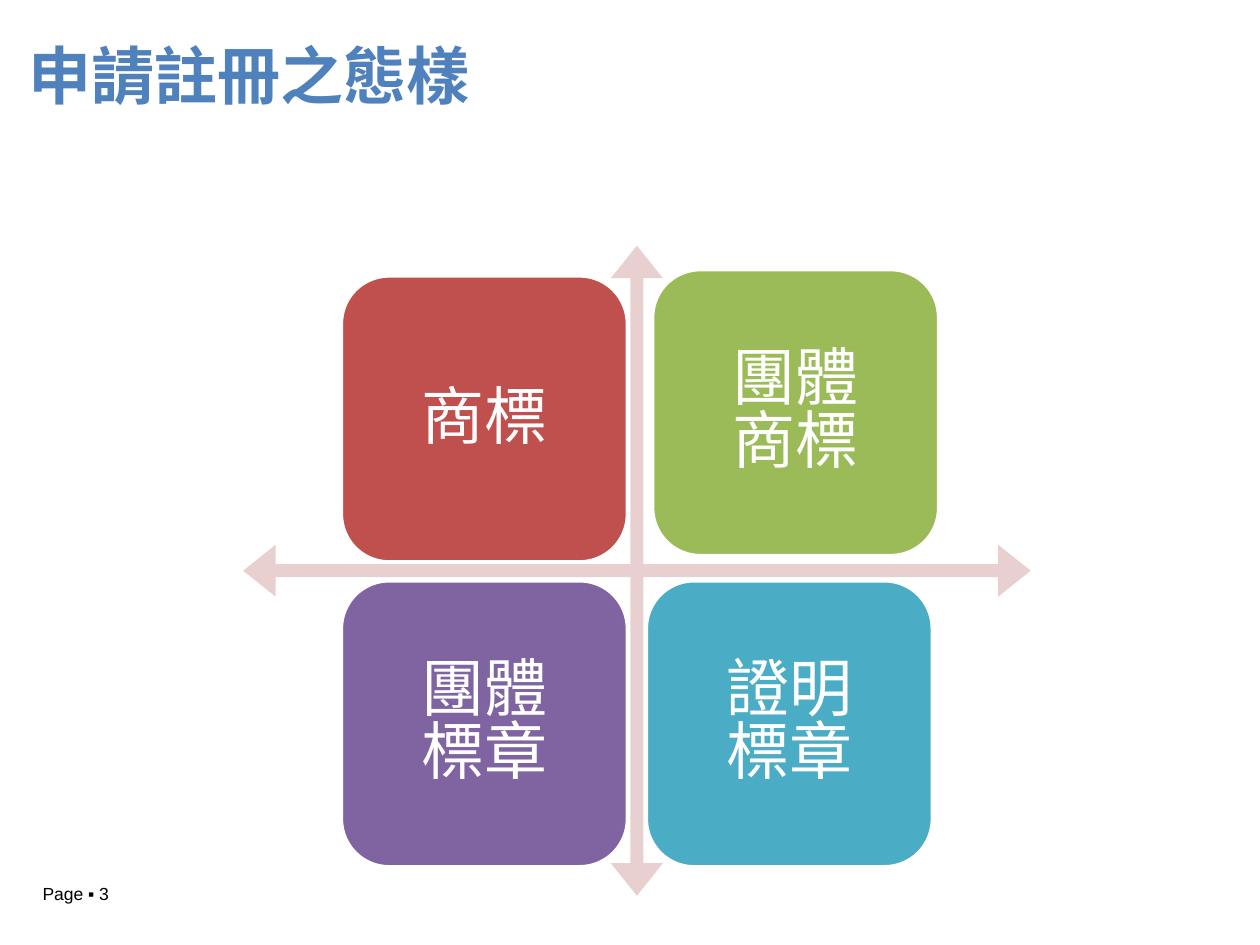
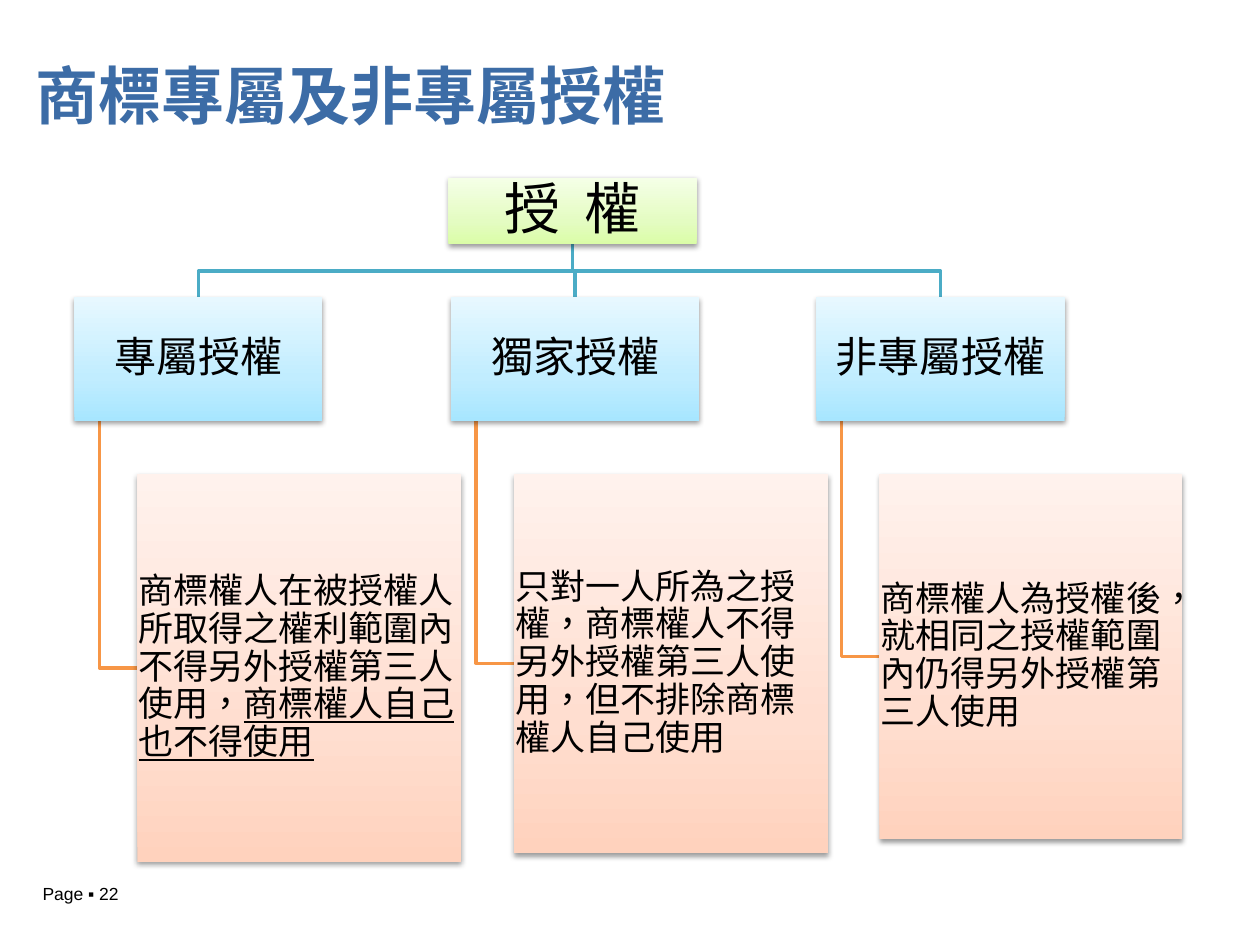
"""Build two slides on trademark registration types and licensing."""
from lxml.etree import SubElement
from pptx import Presentation
from pptx.dml.color import RGBColor
from pptx.enum.shapes import MSO_SHAPE as SHAPE
from pptx.enum.text import MSO_ANCHOR as ANCHOR, MSO_AUTO_SIZE as AUTO, PP_ALIGN as ALIGN
from pptx.oxml.ns import qn
from pptx.util import Inches, Pt

CJK = "Noto Sans CJK SC"
WHITE, BLACK = "FFFFFF", "000000"
BLUE, RED, GREEN, PURPLE, TEAL, ORANGE = "4F81BD", "C0504D", "9BBB59", "8064A2", "4BACC6", "F79646"
PALE_RED = "E8D0D0"
TITLE_GRADIENT = ([(0, "2A4C75"), (50, "3C6CA6"), (100, "4780C5")], 225)
LIME_GRADIENT = ([(0, "DAFDA7"), (35, "E4FCC2"), (100, "F5FFE7")], 270)
SKY_GRADIENT = ([(0, "A7E6FF"), (35, "C1EDFF"), (100, "E7F8FF")], 270)
PEACH_GRADIENT = ([(0, "FFD2BD"), (35, "FFDED0"), (100, "FFF2ED")], 270)


def rgb(color):
    return RGBColor.from_string(color)


def paint(fill, color, element):
    if isinstance(color, str):
        fill.solid()
        fill.fore_color.rgb = rgb(color)
        return
    stops, angle = color
    fill.gradient()
    fill.gradient_angle = 360 - angle
    stop_list = element.find(".//" + qn("a:gsLst"))
    for old in list(stop_list):
        stop_list.remove(old)
    for position, stop_color in stops:
        stop = SubElement(stop_list, qn("a:gs"), pos=str(position * 1000))
        SubElement(stop, qn("a:srgbClr"), val=stop_color)


def write(tf, paragraphs, size, color=BLACK, font=CJK, bold=False, align=ALIGN.LEFT,
          anchor=ANCHOR.MIDDLE, insets=(0.1, 0.05), spacing=0.9, tracking=0):
    tf.word_wrap, tf.auto_size, tf.vertical_anchor = True, AUTO.NONE, anchor
    tf.margin_left = tf.margin_right = Inches(insets[0])
    tf.margin_top = tf.margin_bottom = Inches(insets[1])
    for i, runs in enumerate(paragraphs):
        p = tf.add_paragraph() if i else tf.paragraphs[0]
        p.alignment, p.line_spacing = align, spacing
        for text, underline in runs:
            r = p.add_run()
            r.text = text
            r.font.size, r.font.bold, r.font.name = Pt(size), bold, font
            if underline:
                r.font.underline = True
            rpr = r.font._element
            rpr.set("lang", "zh-TW")
            if tracking:
                rpr.set("spc", str(round(tracking * 100)))
            SubElement(rpr, qn("a:ea"), typeface=font)
            paint(r.font.fill, color, rpr)


def plain(*lines):
    return [[(line, False)] for line in lines]


class Deck:
    """Hold the shared style and the current slide."""

    def __init__(self):
        self.prs = Presentation()
        self.prs.slide_width, self.prs.slide_height = Inches(10), Inches(7.5)

    def slide(self, title, box, page, **style):
        self.s = self.prs.slides.add_slide(self.prs.slide_layouts[5])
        sp = self.s.shapes.title
        sp.left, sp.top, sp.width, sp.height = map(Inches, box)
        write(sp.text_frame, plain(title), 36, bold=True, insets=(0, 0.05), **style)
        footer = self.s.shapes.add_textbox(*map(Inches, (0.24, 6.96, 1.47, 0.27)))
        write(footer.text_frame, plain(f"Page ▪ {page}"), 10, font="Arial",
              anchor=ANCHOR.TOP, spacing=1.0)

    def shape(self, kind, box, fill, outline=None):
        sp = self.s.shapes.add_shape(kind, *map(Inches, box))
        sp.shadow.inherit = False
        paint(sp.fill, fill, sp._element)
        if outline:
            sp.line.color.rgb, sp.line.width = rgb(outline), Pt(2)
        else:
            sp.line.fill.background()
        return sp

    def card(self, box, fill, paragraphs, size, inset=0.02, **style):
        sp = self.shape(SHAPE.RECTANGLE, box, fill)
        effects = sp._element.spPr.find(qn("a:effectLst"))
        shadow = SubElement(effects, qn("a:outerShdw"), blurRad=str(Pt(3.1)),
                            dist=str(Pt(1.6)), dir="5400000", rotWithShape="0")
        shade = SubElement(shadow, qn("a:srgbClr"), val=BLACK)
        SubElement(shade, qn("a:alpha"), val="38000")
        write(sp.text_frame, paragraphs, size, insets=(inset, inset), **style)

    def polyline(self, points, color):
        start, *rest = [tuple(map(Inches, point)) for point in points]
        builder = self.s.shapes.build_freeform(*start)
        builder.add_line_segments(rest, close=False)
        sp = builder.convert_to_shape()
        sp.shadow.inherit = False
        sp.fill.background()
        sp.line.color.rgb, sp.line.width = rgb(color), Pt(2)


def registration_types(deck):
    deck.slide("申請註冊之態樣", (0.23, 0, 9, 1.25), 3, color=BLUE)
    arrows = deck.shape(SHAPE.QUAD_ARROW, (1.93, 1.95, 6.25, 5.16), PALE_RED)
    for i, value in enumerate((0.02, 0.04, 0.05)):
        arrows.adjustments[i] = value
    side = 2.27
    for left, top, fill, lines in (
        (2.71, 2.19, RED, ["商標"]),
        (5.18, 2.14, GREEN, ["團體", "商標"]),
        (2.71, 4.61, PURPLE, ["團體", "標章"]),
        (5.13, 4.61, TEAL, ["證明", "標章"]),
    ):
        tile = deck.shape(SHAPE.ROUNDED_RECTANGLE, (left, top, side, side), fill, WHITE)
        write(tile.text_frame, plain(*lines), 36, color=WHITE, align=ALIGN.CENTER,
              insets=(0.15, 0.15), spacing=Pt(36) if len(lines) > 1 else 0.9)


def licence_types(deck):
    deck.slide("商標專屬及非專屬授權", (0.28, -0.04, 9, 0.99), 22, color=TITLE_GRADIENT,
               anchor=ANCHOR.TOP, spacing=Pt(75))
    width, root_left, root_top, root_height = 1.97, 3.56, 1.41, 0.53
    type_top, type_height, detail_top = 2.36, 0.98, 3.76
    root_x, root_bottom = root_left + width / 2, root_top + root_height
    type_bottom = type_top + type_height
    bend = (root_bottom + type_top) / 2
    licences = (
        (0.59, 2.57, 3.08, "專屬授權",
         [("商標權人在被授權人所取得之權利範圍內不得另外授權第三人使用，", False),
          ("商標權人自己也不得使用", True)]),
        (3.58, 2.49, 3.01, "獨家授權",
         [("只對一人所為之授權，商標權人不得另外授權第三人使用，但不排除商標權人自己使用", False)]),
        (6.48, 2.4, 2.9, "非專屬授權",
         [("商標權人為授權後，就相同之授權範圍內仍得另外授權第三人使用", False)]),
    )
    for left, _, height, _, _ in licences:
        type_x, stem_x, middle = left + width / 2, left + 0.2, detail_top + height / 2
        deck.polyline([(root_x, root_bottom), (root_x, bend), (type_x, bend),
                       (type_x, type_top)], TEAL)
        deck.polyline([(stem_x, type_bottom), (stem_x, middle), (left + 0.5, middle)], ORANGE)
    deck.card((root_left, root_top, width, root_height), LIME_GRADIENT, plain("授 權"), 32,
              align=ALIGN.CENTER, tracking=3.5)
    for left, detail_width, height, name, detail in licences:
        deck.card((left, type_top, width, type_height), SKY_GRADIENT, plain(name), 24,
                  align=ALIGN.CENTER)
        deck.card((left + 0.5, detail_top, detail_width, height), PEACH_GRADIENT, [detail], 20,
                  inset=0.01)


def main():
    deck = Deck()
    registration_types(deck)
    licence_types(deck)
    deck.prs.save("out.pptx")


if __name__ == "__main__":
    main()
